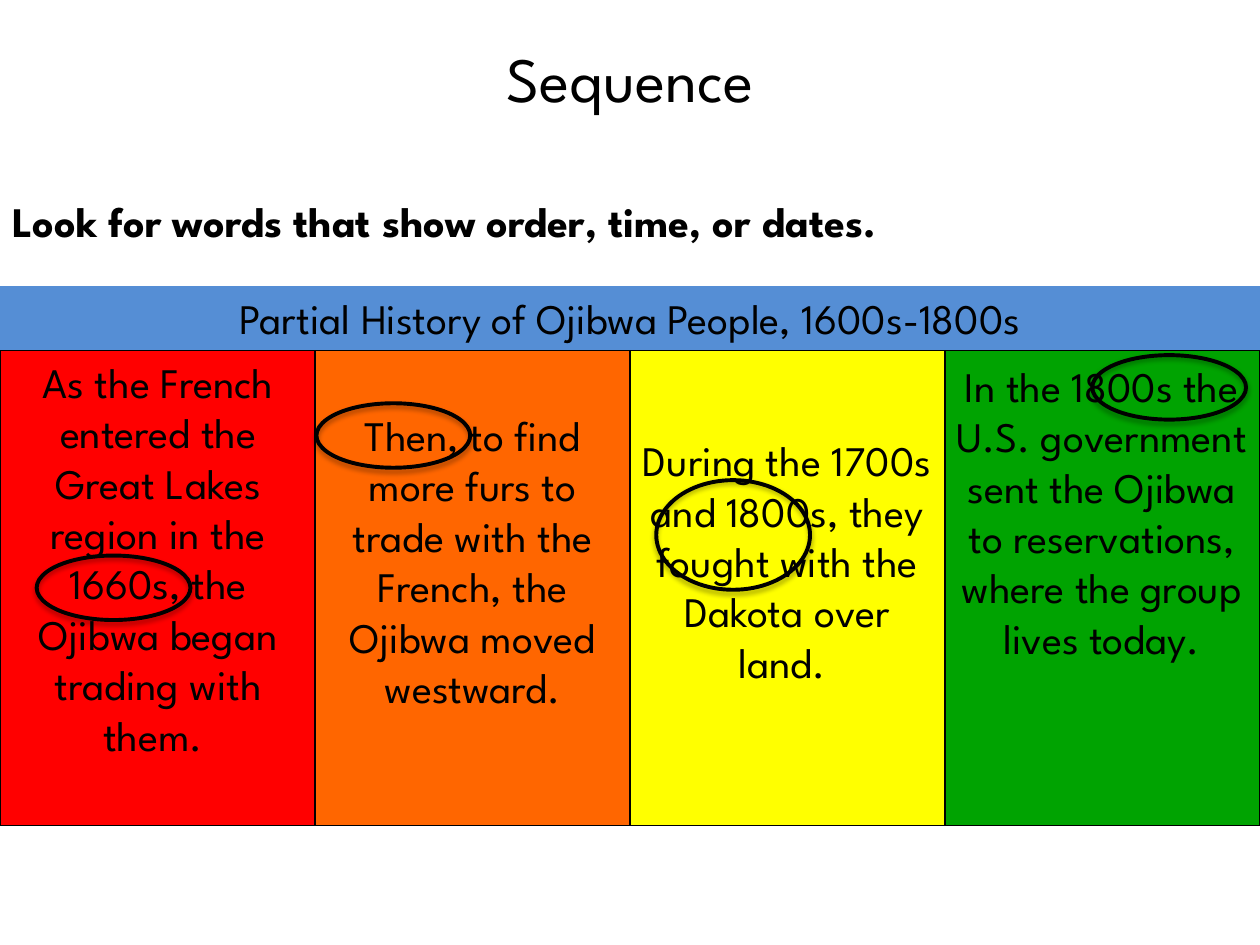
from lxml import etree
from pptx import Presentation
from pptx.dml.color import RGBColor
from pptx.enum.shapes import MSO_SHAPE
from pptx.enum.text import MSO_ANCHOR, MSO_AUTO_SIZE, PP_ALIGN
from pptx.oxml import parse_xml
from pptx.oxml.ns import nsdecls, qn
from pptx.util import Cm, Pt

RECT, OVAL = MSO_SHAPE.RECTANGLE, MSO_SHAPE.OVAL
TOP, GROW = MSO_ANCHOR.TOP, MSO_AUTO_SIZE.SHAPE_TO_FIT_TEXT
LEFT, CENTER = PP_ALIGN.LEFT, PP_ALIGN.CENTER

COLORS = {
    "black": "000000", "band": "558ED5", "red": "FF0000",
    "orange": "FF6600", "yellow": "FFFF00", "green": "00A301",
}
FONT = "League Spartan"
SLIDE_W, SLIDE_H = 25.4, 19.05
BAND_TOP, PANEL_TOP, PANEL_H = 5.77, 7.06, 9.58
PANEL_W, TEXT_STEP, TEXT_W = SLIDE_W / 4, 6.34, 6.38

EVENTS = [
    ("red", 7.06, 9.5, "As the French entered the Great Lakes region in the 1660s, "
     "the Ojibwa began trading with them. "),
    ("orange", 8.13, 7.44, "Then, to find more furs to trade with the French, "
     "the Ojibwa moved westward."),
    ("yellow", 8.64, 6.4, "During the 1700s and 1800s, they fought with the Dakota over land. "),
    ("green", 7.14, 9.5, "In the 1800s the U.S. government sent the Ojibwa to reservations, "
     "where the group lives today."),
]
CIRCLES = [(0.74, 11.2, 1.3), (6.38, 8.13, 1.3), (13.23, 9.68, 2.21), (22.02, 7.16, 1.3)]


def rgb(name):
    """Return the named colour."""
    return RGBColor.from_string(COLORS[name])


def place(sp, x, y, w, h):
    """Move and size a shape, in centimetres."""
    for name, value in {"left": x, "top": y, "width": w, "height": h}.items():
        setattr(sp, name, Cm(value))


def write(sp, text, size=24, bold=False, align=CENTER, spacing=1.0):
    """Fill a shape with one formatted paragraph."""
    tf = sp.text_frame
    for name, value in {"word_wrap": True, "auto_size": GROW, "vertical_anchor": TOP}.items():
        setattr(tf, name, value)
    p = tf.paragraphs[0]
    p.alignment, p.line_spacing = align, spacing
    r = p.add_run()
    r.text = text
    for name, value in {"name": FONT, "size": Pt(size), "bold": bold}.items():
        setattr(r.font, name, value)
    r.font.color.rgb = rgb("black")


def add_text(s, box, text, **fmt):
    """Add a text box."""
    sp = s.shapes.add_textbox(*map(Cm, box))
    write(sp, text, **fmt)


def add_block(s, box, fill, line):
    """Add a filled rectangle."""
    sp = s.shapes.add_shape(RECT, *map(Cm, box))
    sp.shadow.inherit = False
    sp.fill.solid()
    sp.fill.fore_color.rgb = rgb(fill)
    sp.line.color.rgb = rgb(line)
    sp.line.width = Pt(0.75)


def add_circle(s, box):
    """Add an open ellipse with a soft shadow around a time word."""
    sp = s.shapes.add_shape(OVAL, *map(Cm, box))
    sp.shadow.inherit = False
    sp.fill.background()
    sp.line.color.rgb = rgb("black")
    sp.line.width = Pt(2.25)
    effects = sp.element.spPr.find(qn("a:effectLst"))
    shadow = parse_xml(
        f'<a:outerShdw {nsdecls("a")} blurRad="{Pt(3.1)}" dist="{Pt(1.8)}" '
        'dir="5400000" rotWithShape="0"/>')
    color = etree.SubElement(shadow, qn("a:srgbClr"), val=COLORS["black"])
    etree.SubElement(color, qn("a:alpha"), val="35000")
    effects.append(shadow)


def main():
    """Build the sequence slide."""
    prs = Presentation()
    prs.slide_width, prs.slide_height = Cm(SLIDE_W), Cm(SLIDE_H)
    s = prs.slides.add_slide(prs.slide_layouts[5])
    title = s.shapes.title
    place(title, 0, 0.66, SLIDE_W, 1.8)
    write(title, "Sequence", size=36)

    add_block(s, (0, BAND_TOP, SLIDE_W, 10.87), "band", "band")
    for i, (color, *_) in enumerate(EVENTS):
        add_block(s, (i * PANEL_W, PANEL_TOP, PANEL_W, PANEL_H), color, "black")
    add_text(s, (0, BAND_TOP, SLIDE_W, 1.27), "Partial History of Ojibwa People, 1600s-1800s")
    for i, (_, top, height, text) in enumerate(EVENTS):
        add_text(s, (i * TEXT_STEP, top, TEXT_W, height), text)
    add_text(s, (0, 3.3, SLIDE_W, 1.7), "Look for words that show order, time, or dates.",
             bold=True, align=LEFT, spacing=1.5)
    for x, y, height in CIRCLES:
        add_circle(s, (x, y, 3.1, height))
    prs.save("out.pptx")


if __name__ == "__main__":
    main()
